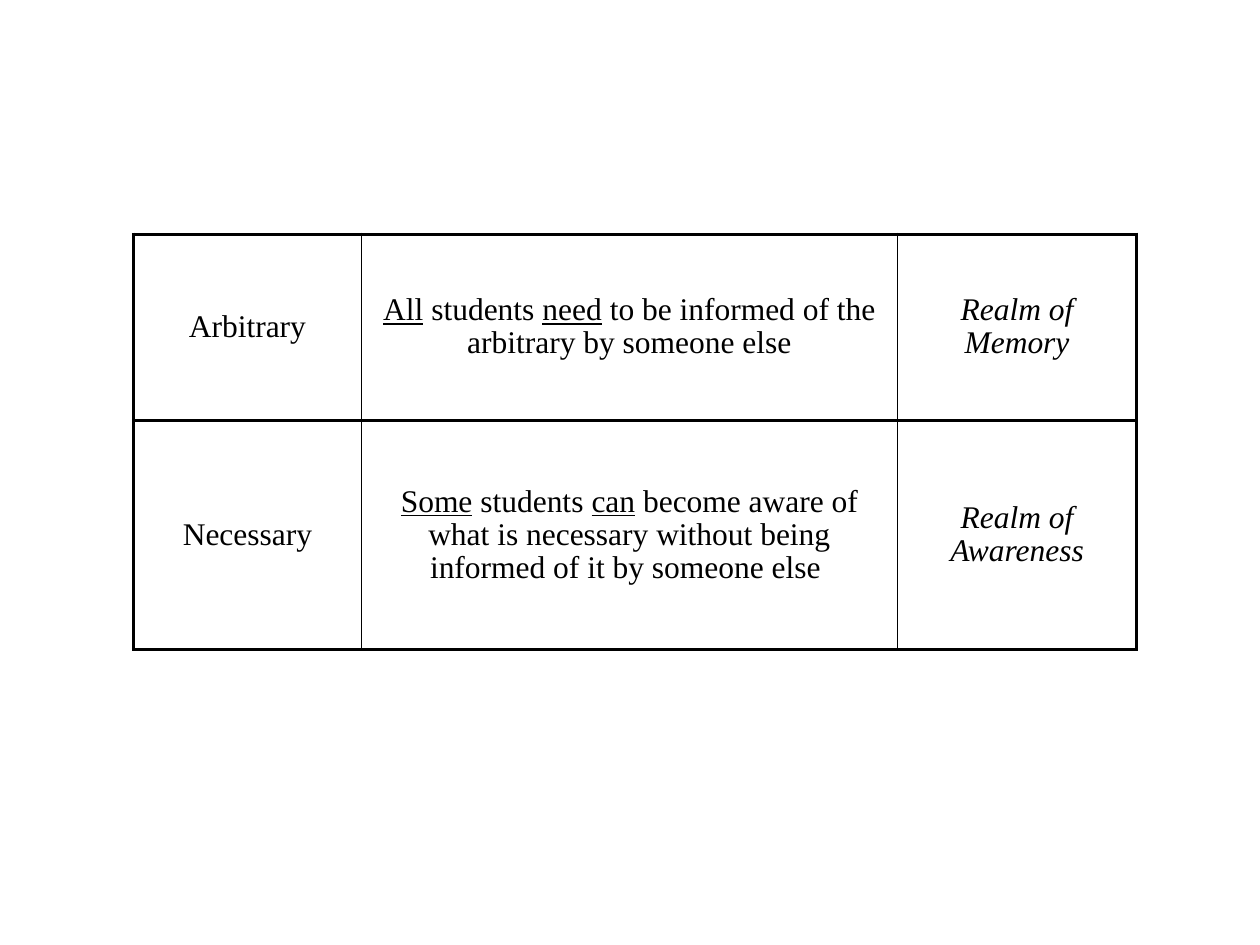
from lxml import etree
from pptx import Presentation
from pptx.dml.color import RGBColor
from pptx.enum.text import MSO_ANCHOR, PP_ALIGN
from pptx.oxml.ns import qn
from pptx.util import Cm, Pt

CENTER = PP_ALIGN.CENTER
MIDDLE = MSO_ANCHOR.MIDDLE
FONT = "Times New Roman"
BLACK = "000000"
COLUMN_WIDTHS = (4.6, 10.8, 4.83)
ROW_HEIGHTS = (3.76, 4.62)
THIN, THICK = 1, 2
ROWS = (
    (
        [("Arbitrary", {})],
        [
            ("All", {"underline": True}),
            (" students ", {}),
            ("need", {"underline": True}),
            (" to be informed of the arbitrary by someone else", {}),
        ],
        [("Realm of Memory", {"italic": True})],
    ),
    (
        [("Necessary", {})],
        [
            ("Some", {"underline": True}),
            (" students ", {}),
            ("can", {"underline": True}),
            (" become aware of what is necessary without being informed of it by someone else ", {}),
        ],
        [("Realm of Awareness", {"italic": True})],
    ),
)


def color(value):
    """Return the colour for a hex string."""
    return RGBColor.from_string(value)


def add_text(paragraph, text, size=18, italic=False, underline=False, fill=BLACK):
    """Add one formatted run to a paragraph."""
    run = paragraph.add_run()
    run.text = text
    font = run.font
    font.name = FONT
    font.size = Pt(size)
    font.italic = italic
    font.underline = underline
    font.color.rgb = color(fill)


def set_borders(cell, widths):
    """Draw the left, right, top and bottom borders in the given point widths."""
    properties = cell._tc.get_or_add_tcPr()
    for position, (side, width) in enumerate(zip("LRTB", widths)):
        line = etree.Element(qn(f"a:ln{side}"), w=str(Pt(width)))
        fill = etree.SubElement(line, qn("a:solidFill"))
        etree.SubElement(fill, qn("a:srgbClr"), val=BLACK)
        properties.insert(position, line)


def fill_cell(cell, runs, borders):
    """Format a cell and write its runs."""
    cell.fill.background()
    cell.vertical_anchor = MIDDLE
    cell.margin_left = cell.margin_right = Cm(0.19)
    cell.margin_top = cell.margin_bottom = Cm(0.1)
    set_borders(cell, borders)
    paragraph = cell.text_frame.paragraphs[0]
    paragraph.alignment = CENTER
    paragraph.line_spacing = 0.95
    for text, style in runs:
        add_text(paragraph, text, **style)


def add_realm_table(slide):
    """Add the table of arbitrary and necessary knowledge."""
    table = slide.shapes.add_table(
        len(ROWS), len(COLUMN_WIDTHS), Cm(2.69), Cm(4.72),
        Cm(sum(COLUMN_WIDTHS)), Cm(sum(ROW_HEIGHTS)),
    ).table
    table.first_row = False
    table.horz_banding = False
    for column, width in zip(table.columns, COLUMN_WIDTHS):
        column.width = Cm(width)
    for row, height in zip(table.rows, ROW_HEIGHTS):
        row.height = Cm(height)
    last_column = len(COLUMN_WIDTHS) - 1
    for row_index, row in enumerate(ROWS):
        for column_index, runs in enumerate(row):
            left = THICK if column_index == 0 else THIN
            right = THICK if column_index == last_column else THIN
            fill_cell(table.cell(row_index, column_index), runs, (left, right, THICK, THICK))


def main():
    """Build and save the presentation."""
    presentation = Presentation()
    presentation.slide_width = Cm(25.4)
    presentation.slide_height = Cm(19.05)
    slide = presentation.slides.add_slide(presentation.slide_layouts[6])
    add_realm_table(slide)
    presentation.save("out.pptx")


if __name__ == "__main__":
    main()
